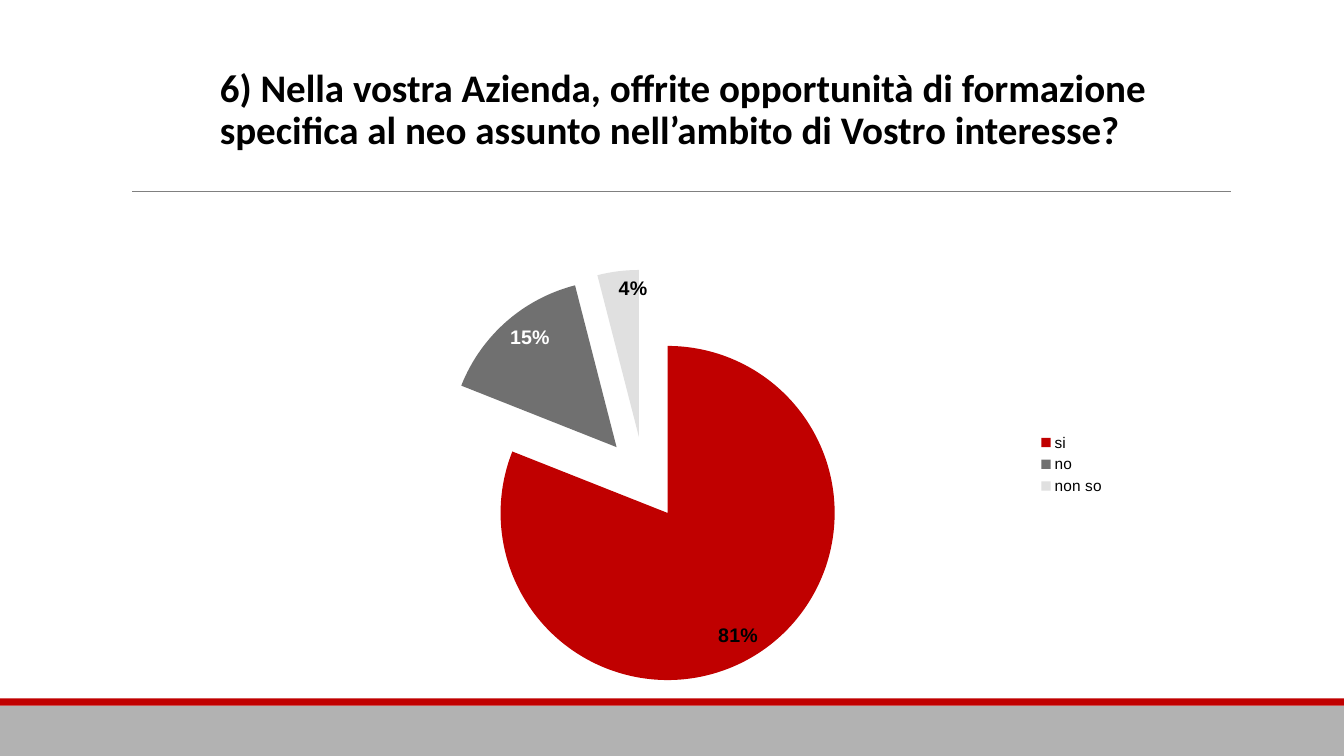
from lxml.etree import SubElement
from pptx import Presentation
from pptx.chart.data import CategoryChartData
from pptx.dml.color import RGBColor
from pptx.enum.chart import XL_CHART_TYPE as CT, XL_LABEL_POSITION as LP, XL_LEGEND_POSITION as LEG
from pptx.enum.shapes import MSO_CONNECTOR, MSO_SHAPE
from pptx.enum.text import MSO_ANCHOR, MSO_AUTO_SIZE, PP_ALIGN
from pptx.oxml import parse_xml
from pptx.oxml.ns import nsdecls, qn
from pptx.util import Cm, Pt

TITLE = ("6) Nella vostra Azienda, offrite opportunità di formazione "
         "specifica al neo assunto nell’ambito di Vostro interesse?")
# answer, percentage, slice colour, label colour
ANSWERS = [("si", 81, "C00000", "000000"),
           ("no", 15, "707070", "FFFFFF"),
           ("non so", 4, "E0E0E0", "000000")]
EXPLOSION = 25
PIE_LAYOUT = {"x": 0.21, "y": 0.09, "w": 0.49, "h": 0.88}

WIDTH, HEIGHT = 33.87, 19.05
FOOTER_H, STRIPE_H = 1.27, 0.18
FOOTER_TOP = HEIGHT - FOOTER_H


def rgb(value):
    return RGBColor.from_string(value)


def style(font, size, color="000000", name="Arial", bold=False):
    font.size, font.name, font.bold = Pt(size), name, bold
    font.color.rgb = rgb(color)


def write(tf, text, size, **fmt):
    p = tf.paragraphs[0]
    p.alignment, p.line_spacing = PP_ALIGN.LEFT, 0.9
    r = p.add_run()
    r.text = text
    style(r.font, size, **fmt)


def add_band(s, top, height, color):
    sp = s.shapes.add_shape(MSO_SHAPE.RECTANGLE, 0, Cm(top), Cm(WIDTH), Cm(height))
    sp.shadow.inherit = False
    sp.fill.solid()
    sp.fill.fore_color.rgb = rgb(color)
    sp.line.fill.background()


def add_rule(s):
    rule = s.shapes.add_connector(MSO_CONNECTOR.STRAIGHT, Cm(3.33), Cm(4.83), Cm(31.01), Cm(4.83))
    rule.line.color.rgb = rgb("808080")
    rule.line.width = Pt(0.5)
    SubElement(rule._element.spPr, qn("a:effectLst"))


def add_title(s):
    title = s.shapes.title
    title.left, title.top, title.width, title.height = Cm(5.54), Cm(1.73), Cm(26.37), Cm(3.18)
    tf = title.text_frame
    tf.word_wrap, tf.auto_size = True, MSO_AUTO_SIZE.NONE
    tf.vertical_anchor = MSO_ANCHOR.TOP
    tf.margin_left = tf.margin_right = tf.margin_top = tf.margin_bottom = 0
    write(tf, TITLE, 27.9, name="Calibri", bold=True)


def place_pie(chart):
    """Fix the plot area's position as fractions of the chart."""
    area = chart._chartSpace.find(".//" + qn("c:plotArea"))
    for old in area.findall(qn("c:layout")):
        area.remove(old)
    sizes = "".join(f'<c:{key} val="{val}"/>' for key, val in PIE_LAYOUT.items())
    area.insert(0, parse_xml(
        f'<c:layout {nsdecls("c")}><c:manualLayout><c:layoutTarget val="inner"/>'
        f'<c:xMode val="edge"/><c:yMode val="edge"/>{sizes}</c:manualLayout></c:layout>'))


def add_pie(s):
    data = CategoryChartData()
    data.categories = [answer[0] for answer in ANSWERS]
    data.add_series("Series 1", [answer[1] for answer in ANSWERS])
    chart = s.shapes.add_chart(CT.PIE, Cm(6.32), Cm(5.72), Cm(21.79), Cm(11.96), data).chart
    style(chart.font, 10)
    chart.has_title = False
    chart.has_legend = True
    chart.legend.position, chart.legend.include_in_layout = LEG.RIGHT, False
    style(chart.legend.font, 11)
    place_pie(chart)

    plot = chart.plots[0]
    plot.vary_by_categories = True
    series = plot.series[0]
    labels = series.data_labels
    labels.show_percentage, labels.show_value = True, False
    labels.number_format, labels.number_format_is_linked = "0%", False
    labels.position = LP.INSIDE_END
    style(labels.font, 14, bold=True)

    for i, (_, _, fill, label_color) in enumerate(ANSWERS):
        point = series.points[i]
        point.format.fill.solid()
        point.format.fill.fore_color.rgb = rgb(fill)
        if label_color != "000000":
            style(point.data_label.font, 14, label_color, bold=True)
            point.data_label.position = LP.INSIDE_END
    ser = series._element
    for label in ser.iter(qn("c:dLbl")):
        label.find(qn("c:showVal")).set("val", "0")
        label.find(qn("c:showPercent")).set("val", "1")
    ser.find(qn("c:dPt")).addprevious(
        parse_xml(f'<c:explosion {nsdecls("c")} val="{EXPLOSION}"/>'))


def main():
    prs = Presentation()
    prs.slide_width, prs.slide_height = Cm(WIDTH), Cm(HEIGHT)
    s = prs.slides.add_slide(prs.slide_layouts[5])
    add_band(s, FOOTER_TOP, FOOTER_H, "B2B2B2")
    add_band(s, FOOTER_TOP - STRIPE_H, STRIPE_H, "C00000")
    add_rule(s)
    add_title(s)
    add_pie(s)
    prs.save("out.pptx")


if __name__ == "__main__":
    main()
